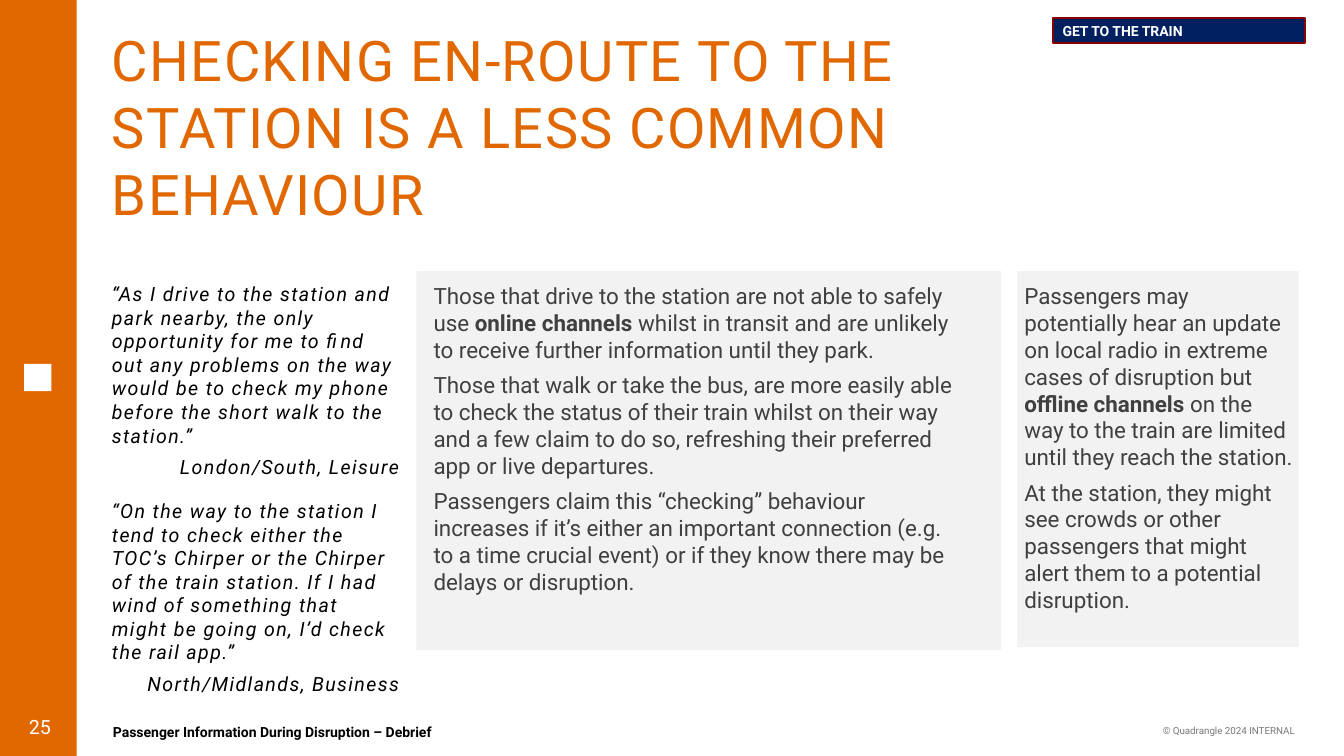
from dataclasses import dataclass, field
from typing import Any

from pptx import Presentation
from pptx.dml.color import RGBColor
from pptx.enum.shapes import MSO_SHAPE as Shape
from pptx.enum.text import MSO_ANCHOR as Anchor, MSO_AUTO_SIZE as AutoSize, PP_ALIGN as Align
from pptx.util import Inches, Pt

ORANGE, NAVY, MAROON = "E16800", "002060", "880000"
WHITE, BLACK, PANEL_GREY = "FFFFFF", "000000", "F2F2F2"
BODY_GREY, NOTE_GREY = "404040", "797979"
PADDING = (0.1, 0.05)
QUOTE_LEFT, QUOTE_WIDTH, TEXT_TOP = 1.11, 2.85, 2.8


@dataclass
class Style:
    size: float
    color: str
    bold: bool = False
    italic: bool = False
    tracking: float = 0
    gap: float = 0


@dataclass
class Panel:
    left: float
    top: float
    width: float
    height: float
    fill: str
    line: str = ""


@dataclass
class TextBlock:
    left: float
    top: float
    width: float
    height: float
    style: Style
    paragraphs: list[str]
    aligns: list[Any] = field(default_factory=list)
    anchor: Any = Anchor.TOP
    padding: tuple[float, float] = (0, 0)


def rgb(color: str) -> RGBColor:
    return RGBColor.from_string(color)


def apply(target: Any, formats: dict[str, Any]) -> None:
    for name, value in formats.items():
        setattr(target, name, value)


def draw_panel(page: Any, panel: Panel) -> Any:
    sides = map(Inches, (panel.left, panel.top, panel.width, panel.height))
    shape = page.shapes.add_shape(Shape.RECTANGLE, *sides)
    shape.shadow.inherit = False
    shape.fill.solid()
    shape.fill.fore_color.rgb = rgb(panel.fill)
    if panel.line:
        shape.line.color.rgb = rgb(panel.line)
        shape.line.width = Pt(1.5)
    else:
        shape.line.fill.background()
    return shape


def write(box: Any, block: TextBlock) -> None:
    """Fill a box with paragraphs; words between ** marks are bold."""
    style = block.style
    frame = box.text_frame
    across, down = map(Inches, block.padding)
    apply(frame, {
        "word_wrap": True, "auto_size": AutoSize.NONE, "vertical_anchor": block.anchor,
        "margin_left": across, "margin_right": across,
        "margin_top": down, "margin_bottom": down,
    })
    for index, text in enumerate(block.paragraphs):
        para = frame.add_paragraph() if index else frame.paragraphs[0]
        apply(para, {
            "alignment": block.aligns[index] if block.aligns else Align.LEFT,
            "space_before": Pt(style.gap if index else 0),
            "line_spacing": 1.0,
        })
        for part, words in enumerate(text.split("**")):
            span = para.add_run()
            span.text = words
            apply(span.font, {
                "name": "Roboto", "size": Pt(style.size), "italic": style.italic,
                "bold": style.bold or part % 2 == 1,
            })
            span.font.color.rgb = rgb(style.color)
            if style.tracking:
                span.font._element.set("spc", str(int(style.tracking * 100)))


def place(box: Any, block: TextBlock) -> None:
    apply(box, {name: Inches(getattr(block, name)) for name in ("left", "top", "width", "height")})
    write(box, block)


QUOTE = Style(14, BLACK, italic=True, tracking=1, gap=6)
BODY = Style(16, BODY_GREY, gap=6)

PANELS = [
    Panel(4.13, 2.69, 5.8, 3.76, PANEL_GREY),
    Panel(10.09, 2.69, 2.79, 3.73, PANEL_GREY),
    Panel(0, 0, 0.76, 7.5, ORANGE),
    Panel(0.24, 3.61, 0.27, 0.27, WHITE),
]

TITLE = TextBlock(
    QUOTE_LEFT, 0.25, 7.91, 2.02, Style(40, ORANGE, tracking=1),
    ["CHECKING EN-ROUTE TO THE STATION IS A LESS COMMON BEHAVIOUR"],
)

TAG_PANEL = Panel(10.44, 0.18, 2.5, 0.25, NAVY, MAROON)
TAG = TextBlock(
    10.44, 0.18, 2.5, 0.25, Style(10, WHITE, bold=True), ["GET TO THE TRAIN"],
    anchor=Anchor.MIDDLE, padding=PADDING,
)

QUOTES = [
    ("“As I drive to the station and park nearby, the only opportunity for me to find out any "
     "problems on the way would be to check my phone before the short walk to the station.”",
     "London/South, Leisure"),
    ("“On the way to the station I tend to check either the TOC’s Chirper or the Chirper of the "
     "train station. If I had wind of something that might be going on, I’d check the rail app.”",
     "North/Midlands, Business"),
]

FINDINGS = [
    TextBlock(4.3, TEXT_TOP, 5.19, 3.5, BODY, [
        "Those that drive to the station are not able to safely use **online channels **whilst in "
        "transit and are unlikely to receive further information until they park.",
        "Those that walk or take the bus, are more easily able to check the status of their train "
        "whilst on their way and a few claim to do so, refreshing their preferred app or live "
        "departures.",
        "Passengers claim this “checking” behaviour increases if it’s either an important "
        "connection (e.g. to a time crucial event) or if they know there may be delays or "
        "disruption.",
    ]),
    TextBlock(10.16, TEXT_TOP, 2.7, 3.5, BODY, [
        "Passengers may potentially hear an update on local radio in extreme cases of disruption "
        "but **offline channels **on the way to the train are limited until they reach the "
        "station.",
        "At the station, they might see crowds or other passengers that might alert them to a "
        "potential disruption.",
    ]),
]

FOOTERS = [
    TextBlock(1.12, 7.18, 4.06, 0.17, Style(10, BLACK, bold=True),
              ["Passenger Information During Disruption – Debrief"], anchor=Anchor.MIDDLE),
    TextBlock(8.44, 7.14, 4.5, 0.22, Style(7, NOTE_GREY), ["© Quadrangle 2024 INTERNAL"],
              [Align.RIGHT], Anchor.MIDDLE, PADDING),
    TextBlock(0, 7.01, 0.79, 0.39, Style(14, WHITE), ["25"],
              [Align.CENTER], Anchor.MIDDLE, PADDING),
]


def main() -> None:
    deck = Presentation()
    apply(deck, {"slide_width": Inches(13.33), "slide_height": Inches(7.5)})
    page = deck.slides.add_slide(deck.slide_layouts[5])

    # Background panels and side band
    for panel in PANELS:
        draw_panel(page, panel)

    # Title and section tag
    place(page.shapes.title, TITLE)
    write(draw_panel(page, TAG_PANEL), TAG)

    # Quotes, findings and footers
    quotes = [
        TextBlock(QUOTE_LEFT, TEXT_TOP + 2.15 * row, QUOTE_WIDTH, 1.97, QUOTE,
                  list(quote), [Align.LEFT, Align.RIGHT])
        for row, quote in enumerate(QUOTES)
    ]
    for block in quotes + FINDINGS + FOOTERS:
        place(page.shapes.add_textbox(0, 0, 0, 0), block)

    deck.save("out.pptx")


if __name__ == "__main__":
    main()
